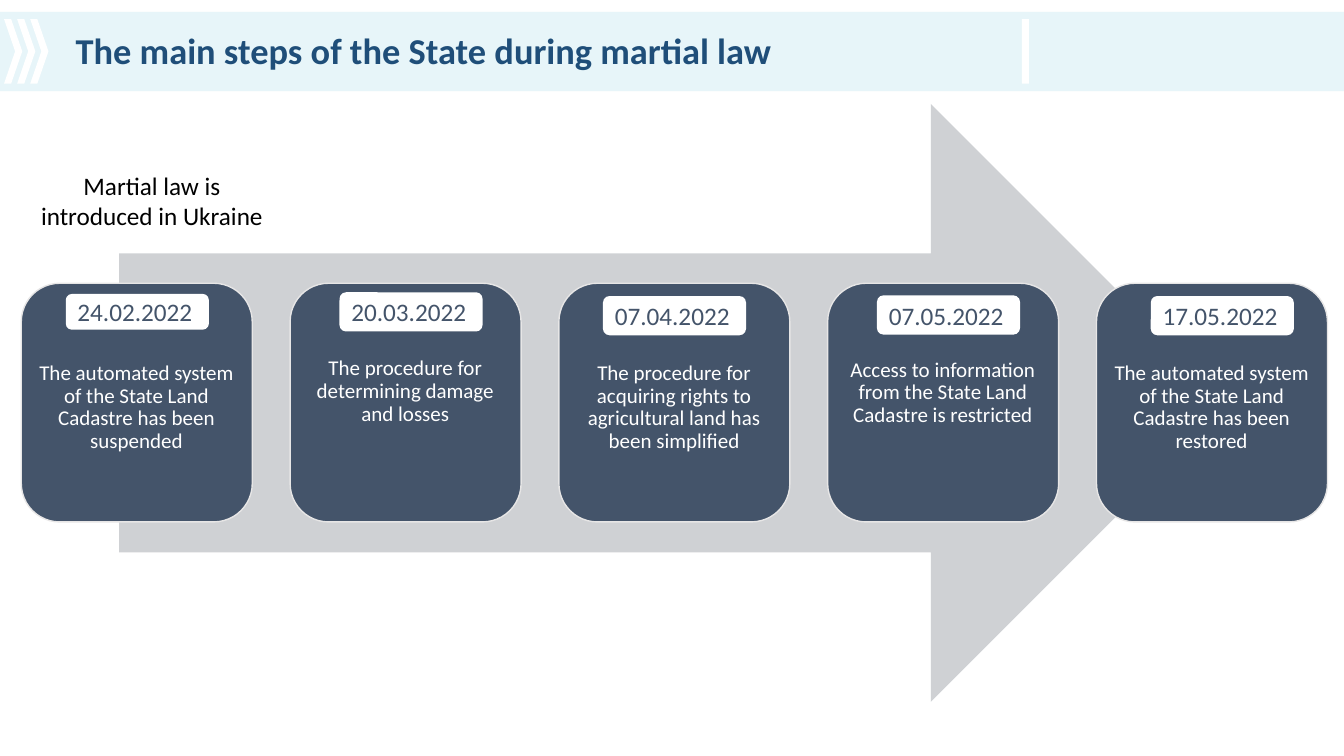
from pptx import Presentation
from pptx.dml.color import RGBColor
from pptx.enum.shapes import MSO_SHAPE
from pptx.enum.text import MSO_ANCHOR, PP_ALIGN
from pptx.util import Pt
from lxml.etree import SubElement
from pptx.oxml.ns import qn

NAVY, WHITE = "44546A", "FFFFFF"


def add_box(kind, x, y, w, h, fill, line=None):
    sp = s.shapes.add_shape(kind, Pt(x), Pt(y), Pt(w), Pt(h))
    sp.shadow.inherit = False
    sp.fill.solid()
    sp.fill.fore_color.rgb = RGBColor.from_string(fill)
    if line:
        sp.line.color.rgb = RGBColor.from_string(line)
        sp.line.width = Pt(1)
    else:
        sp.line.fill.background()
    return sp


def add_text(sp, text, size, color, align=PP_ALIGN.LEFT, anchor=MSO_ANCHOR.TOP, bold=False):
    tf = sp.text_frame
    tf.word_wrap = True
    tf.vertical_anchor = anchor
    p = tf.paragraphs[0]
    p.alignment = align
    r = p.add_run()
    r.text = text
    r.font.name = "Calibri"
    r.font.size = Pt(size)
    r.font.bold = bold
    r.font.color.rgb = RGBColor.from_string(color)
    return tf


prs = Presentation()
prs.slide_width, prs.slide_height = Pt(960), Pt(540)
s = prs.slides.add_slide(prs.slide_layouts[6])

# Header band with chevrons and divider
band = add_box(MSO_SHAPE.RECTANGLE, 0, 8.5, 960, 56.7, "DCF0F7")
band_color = band.fill._xPr.find(qn("a:solidFill"))[0]
SubElement(band_color, qn("a:alpha"), val="66000")
for i in range(3):
    chevron = add_box(MSO_SHAPE.CHEVRON, 2.9 + 9.35 * i, 13.7, 13, 46, WHITE)
    chevron.adjustments[0] = 0.61
add_box(MSO_SHAPE.RECTANGLE, 730, 13.7, 5, 46, WHITE)

# Title
title = s.shapes.add_textbox(Pt(41), Pt(9.4), Pt(680), Pt(56))
tf = add_text(title, "The main steps of the State during martial law", 26, "1F4E79",
              anchor=MSO_ANCHOR.MIDDLE, bold=True)
tf.margin_left = Pt(13)
tf.paragraphs[0].line_spacing = 0.9

# Timeline arrow
add_box(MSO_SHAPE.RIGHT_ARROW, 85, 74.3, 793.4, 427, "CFD1D4")

# Step cards: date, date left, date top, date height, text inset, text
steps = [
    ("24.02.2022", 47, 210, 25.5, 48.5,
     "The automated system of the State Land Cadastre has been suspended"),
    ("20.03.2022", 242.5, 208.8, 28, 46.5,
     "The procedure for determining damage and losses"),
    ("07.04.2022", 430.7, 211.5, 28, 48.5,
     "The procedure for acquiring rights to agricultural land has been simplified"),
    ("07.05.2022", 626.4, 211, 28, 48.5,
     "Access to information from the State Land Cadastre is restricted"),
    ("17.05.2022", 822, 211.5, 28, 48.5,
     "The automated system of the State Land Cadastre has been restored"),
]
for i, (date, date_x, date_y, date_h, inset, text) in enumerate(steps):
    x = 15.2 + 192 * i
    add_box(MSO_SHAPE.ROUNDED_RECTANGLE, x, 202.3, 165, 170.5, NAVY, "E7E6E6")
    body = s.shapes.add_textbox(Pt(x + 8), Pt(210.2), Pt(148.5), Pt(154.8))
    tf = add_text(body, text, 15, WHITE, PP_ALIGN.CENTER)
    tf.margin_left = tf.margin_right = tf.margin_bottom = Pt(4.5)
    tf.margin_top = Pt(inset)
    tf.paragraphs[0].line_spacing = 0.9
    pill = add_box(MSO_SHAPE.ROUNDED_RECTANGLE, date_x, date_y, 102.2, date_h, WHITE)
    add_text(pill, date, 18, NAVY, anchor=MSO_ANCHOR.MIDDLE)

# Note above the first step
note = s.shapes.add_textbox(Pt(19.5), Pt(118), Pt(178), Pt(51))
add_text(note, "Martial law is introduced in Ukraine", 18, "000000", PP_ALIGN.CENTER)

prs.save("out.pptx")
